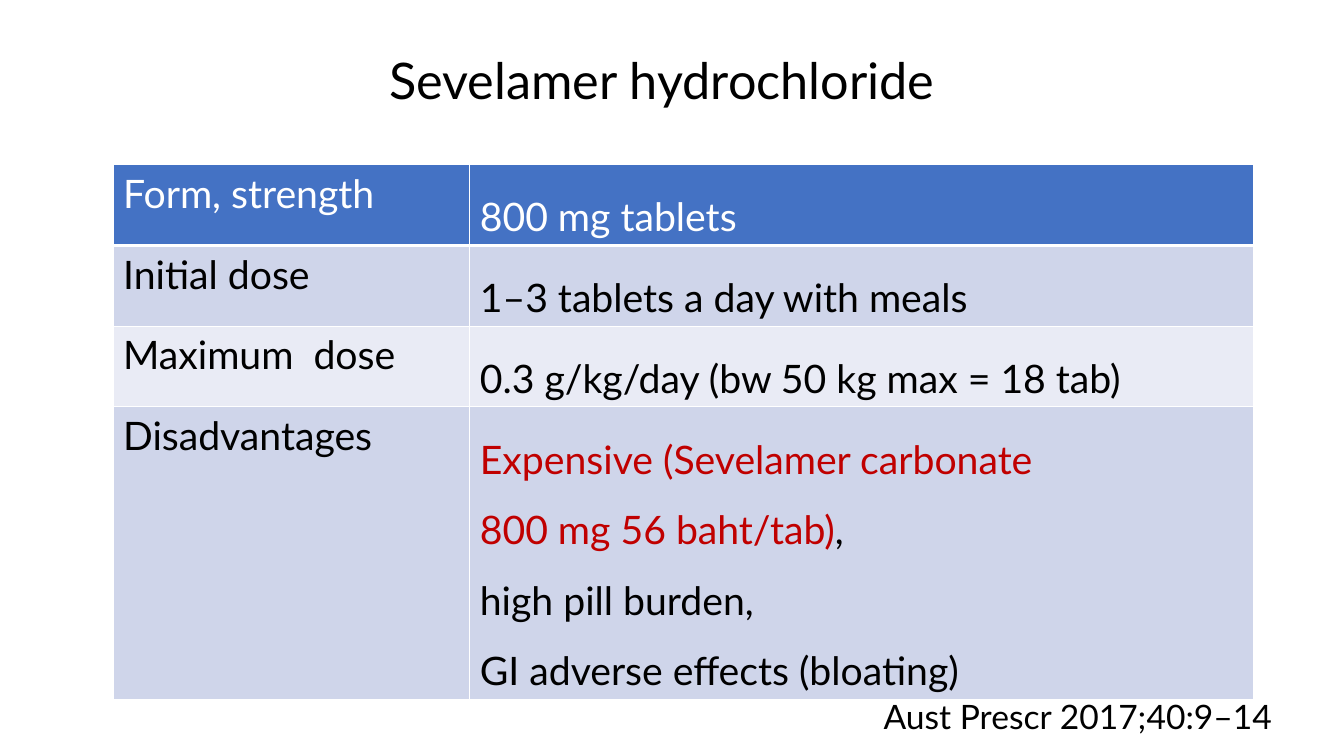
from dataclasses import dataclass

from lxml.etree import SubElement
from pptx import Presentation
from pptx.dml.color import RGBColor
from pptx.enum.text import MSO_AUTO_SIZE, PP_ALIGN
from pptx.oxml.ns import qn
from pptx.util import Cm, Pt


@dataclass(frozen=True)
class Theme:
    """Colours, font and type sizes of the slide."""
    font: str = "Lato"
    title: int = 36
    body: int = 28
    source: int = 24
    ink: str = "000000"
    light: str = "FFFFFF"
    warning: str = "C00000"
    header: str = "4472C4"
    bands: tuple = ("CFD5EA", "E9EBF5")


THEME = Theme()
ROWS = [
    ("Form, strength", ["800 mg tablets"]),
    ("Initial dose", ["1–3 tablets a day with meals"]),
    ("Maximum  dose", ["0.3 g/kg/day (bw 50 kg max = 18 tab)"]),
    ("Disadvantages", [
        [("Expensive (Sevelamer carbonate \v800 mg 56 baht/tab)", THEME.warning),
         (",", THEME.ink)],
        "high pill burden,",
        "GI adverse effects (bloating)",
    ]),
]


def style(font, size, color):
    """Set typeface, size and colour on a font."""
    font.name = THEME.font
    font.size = Pt(size)
    font.bold = False
    font.color.rgb = RGBColor.from_string(color)


def add_parts(p, parts):
    """Add coloured runs, breaking lines at vertical tabs."""
    for text, color in parts:
        for i, line in enumerate(text.split("\v")):
            if i:
                p.add_line_break()
            r = p.add_run()
            r.text = line
            style(r.font, THEME.body, color)


def fill_text(tf, paragraphs, size, color, spacing=None, align=None):
    """Write paragraphs into a text frame."""
    for i, content in enumerate(paragraphs):
        p = tf.add_paragraph() if i else tf.paragraphs[0]
        p.line_spacing = spacing
        p.alignment = align
        if isinstance(content, str):
            p.text = content
            style(p.font, size, color)
        else:
            add_parts(p, content)


def add_label(s, box, text, size, **layout):
    """Place a one-line text box."""
    tf = s.shapes.add_textbox(*box).text_frame
    tf.word_wrap = True
    tf.auto_size = MSO_AUTO_SIZE.SHAPE_TO_FIT_TEXT
    fill_text(tf, [text], size, THEME.ink, **layout)


def set_borders(cell, top, bottom):
    """Draw the borders of a cell, widths in points."""
    tc_pr = cell._tc.get_or_add_tcPr()
    for side, width in (("L", 1), ("R", 1), ("T", top), ("B", bottom)):
        ln = SubElement(tc_pr, qn(f"a:ln{side}"), w=str(Pt(width)))
        solid = SubElement(ln, qn("a:solidFill"))
        SubElement(solid, qn("a:srgbClr"), val=THEME.light)


def add_dose_table(s, box):
    """Place the dosing table, its last row taking the spare height."""
    left, top, width, height = box
    table = s.shapes.add_table(len(ROWS), 2, left, top, width, height).table
    label_width, row_height = Cm(8.99), Cm(1.85)
    table.columns[0].width = label_width
    table.columns[1].width = width - label_width
    last = len(ROWS) - 1
    for i, (label, details) in enumerate(ROWS):
        table.rows[i].height = height - last * row_height if i == last else row_height
        color = THEME.ink if i else THEME.light
        band = THEME.bands[(i - 1) % 2] if i else THEME.header
        for j, (content, spacing) in enumerate((([label], None), (details, 1.5))):
            cell = table.cell(i, j)
            set_borders(cell, 3 if i == 1 else 1, 1 if i else 3)
            cell.fill.solid()
            cell.fill.fore_color.rgb = RGBColor.from_string(band)
            fill_text(cell.text_frame, content, THEME.body, color, spacing)


def main():
    """Build and save the slide."""
    prs = Presentation()
    prs.slide_width, prs.slide_height = Cm(33.87), Cm(19.05)
    s = prs.slides.add_slide(prs.slide_layouts[6])
    add_label(s, (Cm(-0.25), Cm(0.36), Cm(33.87), Cm(2.36)),
              "Sevelamer hydrochloride", THEME.title,
              spacing=1.5, align=PP_ALIGN.CENTER)
    add_label(s, (Cm(22.02), Cm(17.4), Cm(10.77), Cm(1.27)),
              "Aust Prescr 2017;40:9–14", THEME.source)
    add_dose_table(s, (Cm(2.85), Cm(4.15), Cm(28.75), Cm(12.7)))
    prs.save("out.pptx")


if __name__ == "__main__":
    main()
